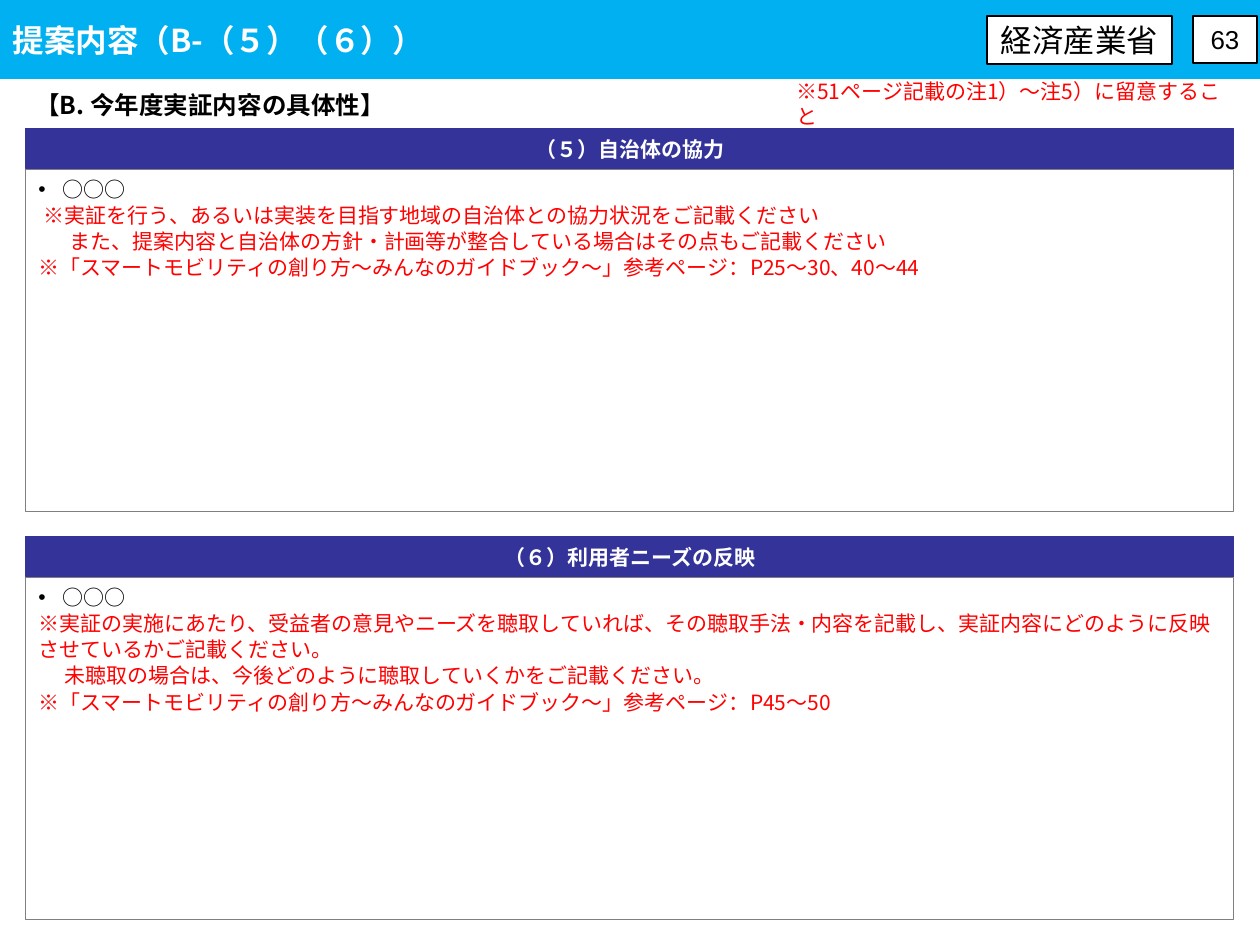
from lxml.etree import SubElement
from pptx import Presentation
from pptx.dml.color import RGBColor
from pptx.enum.shapes import MSO_SHAPE as Shape
from pptx.enum.text import MSO_ANCHOR as Anchor, PP_ALIGN as Align
from pptx.oxml.ns import qn
from pptx.util import Pt

PX = 914400 / 126
CJK = "Noto Sans CJK JP"
BLACK, WHITE, RED = "000000", "FFFFFF", "FF0000"
SKY, NAVY, GRAY = "00B0F0", "333399", "808080"
PANEL_LEFT, PANEL_WIDTH = 26, 1208
BAR_HEIGHT, BODY_HEIGHT = 40, 343
BULLET_INDENT = 24

SECTIONS = [
    (129, "（５）自治体の協力", [
        (5, "※実証を行う、あるいは実装を目指す地域の自治体との協力状況をご記載ください"),
        (31, "また、提案内容と自治体の方針・計画等が整合している場合はその点もご記載ください"),
        (0, "※「スマートモビリティの創り方～みんなのガイドブック～」参考ページ：P25～30、40～44"),
    ]),
    (537, "（６）利用者ニーズの反映", [
        (0, "※実証の実施にあたり、受益者の意見やニーズを聴取していれば、その聴取手法・内容を記載し、"
            "実証内容にどのように反映させているかご記載ください。"),
        (26, "未聴取の場合は、今後どのように聴取していくかをご記載ください。"),
        (0, "※「スマートモビリティの創り方～みんなのガイドブック～」参考ページ：P45～50"),
    ]),
]


def px(length):
    return round(length * PX)


def color(value):
    return RGBColor.from_string(value)


def place(element, left, top, width, height):
    element.left, element.top = px(left), px(top)
    element.width, element.height = px(width), px(height)


def add_run(paragraph, text, size, fill, bold=False, font=CJK):
    run = paragraph.add_run()
    run.text = text
    run.font.size = Pt(size)
    run.font.name = font
    run.font.bold = bold
    run.font.color.rgb = color(fill)
    SubElement(run.font._element, qn("a:ea")).set("typeface", CJK)


def set_indent(paragraph, margin, first_line=0):
    properties = paragraph._p.get_or_add_pPr()
    properties.set("marL", str(px(margin)))
    properties.set("indent", str(px(first_line)))
    return properties


def add_bullet(paragraph):
    properties = set_indent(paragraph, BULLET_INDENT, -BULLET_INDENT)
    SubElement(properties, qn("a:buFont")).set("typeface", "Arial")
    SubElement(properties, qn("a:buChar")).set("char", "•")


def add_box(slide, bounds, fill, line, line_width):
    box = slide.shapes.add_shape(Shape.RECTANGLE, *map(px, bounds))
    box.shadow.inherit = False
    if fill:
        box.fill.solid()
        box.fill.fore_color.rgb = color(fill)
    else:
        box.fill.background()
    box.line.color.rgb = color(line)
    box.line.width = Pt(line_width)
    box.text_frame.word_wrap = True
    return box.text_frame


def add_label(slide, bounds, text, size, fill, line, line_width, text_color, bold=False):
    frame = add_box(slide, bounds, fill, line, line_width)
    frame.margin_left = frame.margin_right = 0
    frame.vertical_anchor = Anchor.MIDDLE
    paragraph = frame.paragraphs[0]
    paragraph.alignment = Align.CENTER
    add_run(paragraph, text, size, text_color, bold, "Arial")


def add_title(slide, text):
    title = slide.shapes.title
    place(title, 0, 0, 1260, 79)
    title.fill.solid()
    title.fill.fore_color.rgb = color(SKY)
    title.text_frame.vertical_anchor = Anchor.MIDDLE
    paragraph = title.text_frame.paragraphs[0]
    paragraph.alignment = Align.LEFT
    add_run(paragraph, text, 18, WHITE, True)


def add_text(slide, bounds, text, size, fill, bold=False):
    frame = slide.shapes.add_textbox(*map(px, bounds)).text_frame
    frame.word_wrap = True
    frame.vertical_anchor = Anchor.MIDDLE
    add_run(frame.paragraphs[0], text, size, fill, bold)


def add_section(slide, top, heading, notes):
    add_label(slide, (PANEL_LEFT, top, PANEL_WIDTH, BAR_HEIGHT),
              heading, 12, NAVY, NAVY, 0.5, WHITE, True)
    body = (PANEL_LEFT, top + BAR_HEIGHT, PANEL_WIDTH, BODY_HEIGHT)
    frame = add_box(slide, body, None, GRAY, 0.5)
    frame.vertical_anchor = Anchor.TOP
    answer = frame.paragraphs[0]
    add_run(answer, "○○○", 12, BLACK)
    for indent, note in notes:
        paragraph = frame.add_paragraph()
        set_indent(paragraph, indent)
        add_run(paragraph, note, 12, RED)
    for paragraph in frame.paragraphs:
        paragraph.alignment = Align.LEFT
        paragraph.line_spacing = Pt(15)
    add_bullet(answer)


def main():
    deck = Presentation()
    deck.slide_width, deck.slide_height = px(1260), px(945)
    slide = deck.slides.add_slide(deck.slide_layouts[5])
    add_title(slide, "提案内容（B-（５）（６））")
    add_label(slide, (987, 16, 185, 48), "経済産業省", 18, WHITE, BLACK, 1, BLACK)
    add_label(slide, (1193, 16, 64, 47), "63", 14.8, WHITE, BLACK, 0.75, BLACK)
    add_text(slide, (23, 83, 449, 43), "【B. 今年度実証内容の具体性】", 14, BLACK, True)
    add_text(slide, (784, 84, 449, 39), "※51ページ記載の注1）～注5）に留意すること", 12, RED)
    for top, heading, notes in SECTIONS:
        add_section(slide, top, heading, notes)
    deck.save("out.pptx")


if __name__ == "__main__":
    main()
